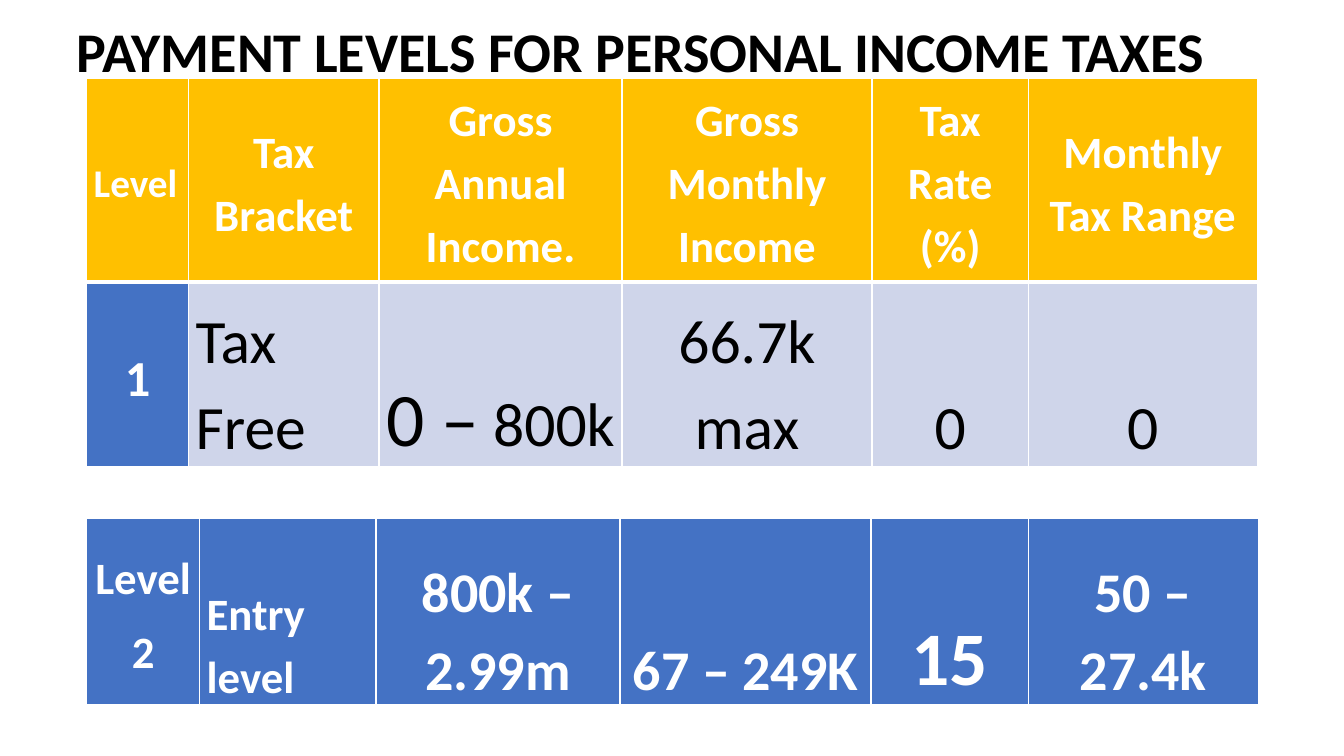
from lxml import etree
from pptx import Presentation
from pptx.dml.color import RGBColor
from pptx.enum.text import MSO_ANCHOR, PP_ALIGN
from pptx.oxml.ns import qn
from pptx.util import Inches, Pt

LEFT, CENTER = PP_ALIGN.LEFT, PP_ALIGN.CENTER
MIDDLE, BOTTOM = MSO_ANCHOR.MIDDLE, MSO_ANCHOR.BOTTOM
WHITE = RGBColor(0xFF, 0xFF, 0xFF)
BLACK = RGBColor(0, 0, 0)
GOLD = RGBColor(0xFF, 0xC0, 0x00)
BLUE = RGBColor(0x44, 0x72, 0xC4)
PALE = RGBColor(0xCF, 0xD5, 0xEA)
FONT = "Calibri"

TITLE = "PAYMENT LEVELS FOR PERSONAL INCOME TAXES"
TABLE_LEFT = 0.86

# A cell is (paragraphs, fill, alignment, anchor); a paragraph is a list of (text, size).
HEADER = [([[("Level", 28)]], GOLD, LEFT, MIDDLE)] + [
    ([[(label, 32)]], GOLD, CENTER, MIDDLE)
    for label in ("Tax Bracket", "Gross Annual Income.", "Gross Monthly Income",
                  "Tax Rate (%)", "Monthly Tax Range")
]
TAX_FREE = [
    ([[("1", 36)]], BLUE, CENTER, MIDDLE),
    ([[("Tax Free", 44)]], PALE, LEFT, BOTTOM),
    ([[("0 –", 54), (" 800k", 44)]], PALE, CENTER, BOTTOM),
    ([[("66.7k max", 44)]], PALE, CENTER, BOTTOM),
    ([[("0", 44)]], PALE, CENTER, BOTTOM),
    ([[("0", 44)]], PALE, CENTER, BOTTOM),
]
ENTRY_LEVEL = [
    ([[("Level", 32)], [("2", 32)]], BLUE, CENTER, MIDDLE),
    ([[("Entry level", 32)]], BLUE, LEFT, BOTTOM),
    ([[("800k – 2.99m", 40)]], BLUE, CENTER, BOTTOM),
    ([[("67 – 249K", 40)]], BLUE, CENTER, BOTTOM),
    ([[("15", 54)]], BLUE, CENTER, BOTTOM),
    ([[("50 – 27.4k", 40)]], BLUE, CENTER, BOTTOM),
]
# (top, column widths, row heights, rows, bottom border of each row)
TABLES = [
    (0.78, (1.01, 1.89, 2.41, 2.48, 1.55, 2.27), (2.02, 1.83), (HEADER, TAX_FREE), (3, 1)),
    (5.14, (1.12, 1.75, 2.42, 2.49, 1.56, 2.28), (1.86,), (ENTRY_LEVEL,), (3,)),
]


def style_span(span, size, color, bold=True):
    span.font.name = FONT
    span.font.size = Pt(size)
    span.font.bold = bold
    span.font.color.rgb = color


def add_borders(cell, bottom_width):
    properties = cell._tc.get_or_add_tcPr()
    widths = {"a:lnL": 1, "a:lnR": 1, "a:lnT": 1, "a:lnB": bottom_width}
    for position, (tag, width) in enumerate(widths.items()):
        line = etree.Element(qn(tag), w=str(Pt(width)))
        fill = etree.SubElement(line, qn("a:solidFill"))
        etree.SubElement(fill, qn("a:srgbClr"), val=str(WHITE))
        properties.insert(position, line)


def fill_cell(cell, content, bottom_width):
    paragraphs, fill, alignment, anchor = content
    cell.fill.solid()
    cell.fill.fore_color.rgb = fill
    cell.vertical_anchor = anchor
    cell.margin_left = cell.margin_right = Inches(0.07)
    cell.margin_top = cell.margin_bottom = 0
    add_borders(cell, bottom_width)
    frame = cell.text_frame
    for index, spans in enumerate(paragraphs):
        para = frame.add_paragraph() if index else frame.paragraphs[0]
        para.alignment = alignment
        para.line_spacing = 1.15
        para.space_after = Pt(8)
        for text, size in spans:
            span = para.add_run()
            span.text = text
            style_span(span, size, BLACK if fill == PALE else WHITE, fill != PALE)


def add_title(page):
    box = page.shapes.add_textbox(Inches(0.29), Inches(0.09), Inches(12.12), Inches(0.82))
    frame = box.text_frame
    frame.word_wrap = True
    frame.vertical_anchor = MIDDLE
    frame.text = TITLE
    para = frame.paragraphs[0]
    para.alignment = CENTER
    style_span(para.runs[0], 40, BLACK)


def add_tax_table(page, top, widths, heights, rows, bottoms):
    table = page.shapes.add_table(
        len(rows), len(widths), Inches(TABLE_LEFT), Inches(top),
        Inches(sum(widths)), Inches(sum(heights))).table
    for column, width in zip(table.columns, widths):
        column.width = Inches(width)
    for row, height, contents, bottom in zip(table.rows, heights, rows, bottoms):
        row.height = Inches(height)
        for cell, content in zip(row.cells, contents):
            fill_cell(cell, content, bottom)


def main():
    deck = Presentation()
    deck.slide_width, deck.slide_height = Inches(13.33), Inches(7.5)
    page = deck.slides.add_slide(deck.slide_layouts[6])
    add_title(page)
    for table in TABLES:
        add_tax_table(page, *table)
    deck.save("out.pptx")


if __name__ == "__main__":
    main()
